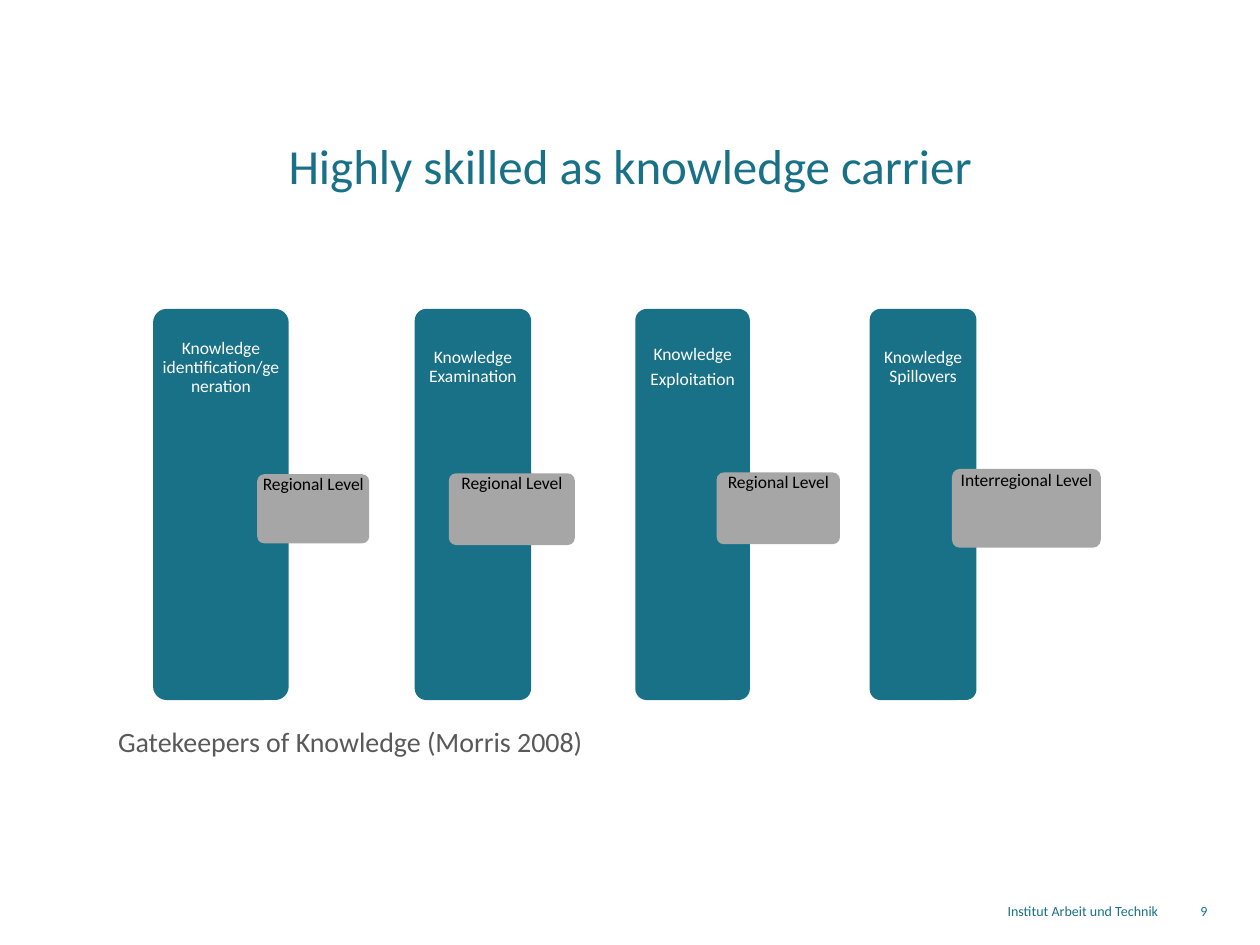
import pptx
import pptx.util
import pptx.dml.color
import pptx.enum.shapes
import pptx.enum.text
from dataclasses import dataclass

Pt = pptx.util.Pt
Align = pptx.enum.text.PP_ALIGN
Anchor = pptx.enum.text.MSO_ANCHOR


@dataclass
class Theme:
    font: str = "Calibri"
    teal: str = "187186"
    grey: str = "A6A6A6"
    dark: str = "595959"
    white: str = "FFFFFF"
    black: str = "000000"
    title: int = 28
    note: int = 16
    label: int = 10
    foot: int = 8


theme = Theme()


def write(shape, lines, size, color, align, anchor=Anchor.TOP, inset=0, after=0, pitch=1.0):
    frame = shape.text_frame
    frame.text = "\n".join(lines)
    frame.word_wrap = True
    frame.auto_size = pptx.enum.text.MSO_AUTO_SIZE.NONE
    frame.vertical_anchor = anchor
    frame.margin_left = frame.margin_right = Pt(inset)
    frame.margin_top = frame.margin_bottom = Pt(inset)
    for para in frame.paragraphs:
        para.alignment = align
        para.line_spacing = pitch
        para.space_after = Pt(after)
        para.font.name = theme.font
        para.font.size = Pt(size)
        para.font.color.rgb = pptx.dml.color.RGBColor.from_string(color)


def card(left, top, width, height, head, fill, lines, color):
    """Rounded block with its label in a band of height head at the top."""
    block = slide.shapes.add_shape(
        pptx.enum.shapes.MSO_SHAPE.ROUNDED_RECTANGLE,
        Pt(left), Pt(top), Pt(width), Pt(height))
    block.adjustments[0] = 0.1
    block.shadow.inherit = False
    block.fill.solid()
    block.fill.fore_color.rgb = pptx.dml.color.RGBColor.from_string(fill)
    block.line.fill.background()
    label = slide.shapes.add_textbox(Pt(left), Pt(top), Pt(width), Pt(head))
    write(label, lines, theme.label, color, Align.CENTER, Anchor.MIDDLE,
          inset=3, after=3.5, pitch=0.9)


deck = pptx.Presentation()
deck.slide_width, deck.slide_height = Pt(720), Pt(540)
slide = deck.slides.add_slide(deck.slide_layouts[5])

# Title
title = slide.shapes.title
title.left, title.top, title.width, title.height = Pt(155.5), Pt(60), Pt(409), Pt(69)
write(title, ["Highly skilled as knowledge carrier"], theme.title, theme.teal,
      Align.CENTER, Anchor.MIDDLE)

# Stages: column left, width, label; then level left, top, width, height, label
stages = [
    (87.5, 77.5, ["Knowledge identification/generation"],
     147, 271, 64, 39.5, "Regional Level"),
    (237, 66.5, ["Knowledge Examination"],
     256.5, 270.5, 72, 41, "Regional Level"),
    (363, 65.5, ["Knowledge", "Exploitation"],
     409.5, 270, 70.5, 41, "Regional Level"),
    (497, 61, ["Knowledge Spillovers"],
     544, 268, 85, 45, "Interregional Level"),
]
for left, width, name, x, y, w, h, level in stages:
    card(left, 176.5, width, 223.5, 67, theme.teal, name, theme.white)
    card(x, y, w, h, h * 0.3, theme.grey, [level], theme.black)

# Source note and footer
notes = [
    ("Gatekeepers of Knowledge (Morris 2008)", 40, 414, 293, 20, theme.note, theme.dark),
    ("Institut Arbeit und Technik", 547, 516, 115, 10, theme.foot, theme.teal),
    ("9", 662, 516, 28, 10, theme.foot, theme.teal),
]
for text, left, top, width, height, size, color in notes:
    box = slide.shapes.add_textbox(Pt(left), Pt(top), Pt(width), Pt(height))
    write(box, [text], size, color, Align.RIGHT)

deck.save("out.pptx")
